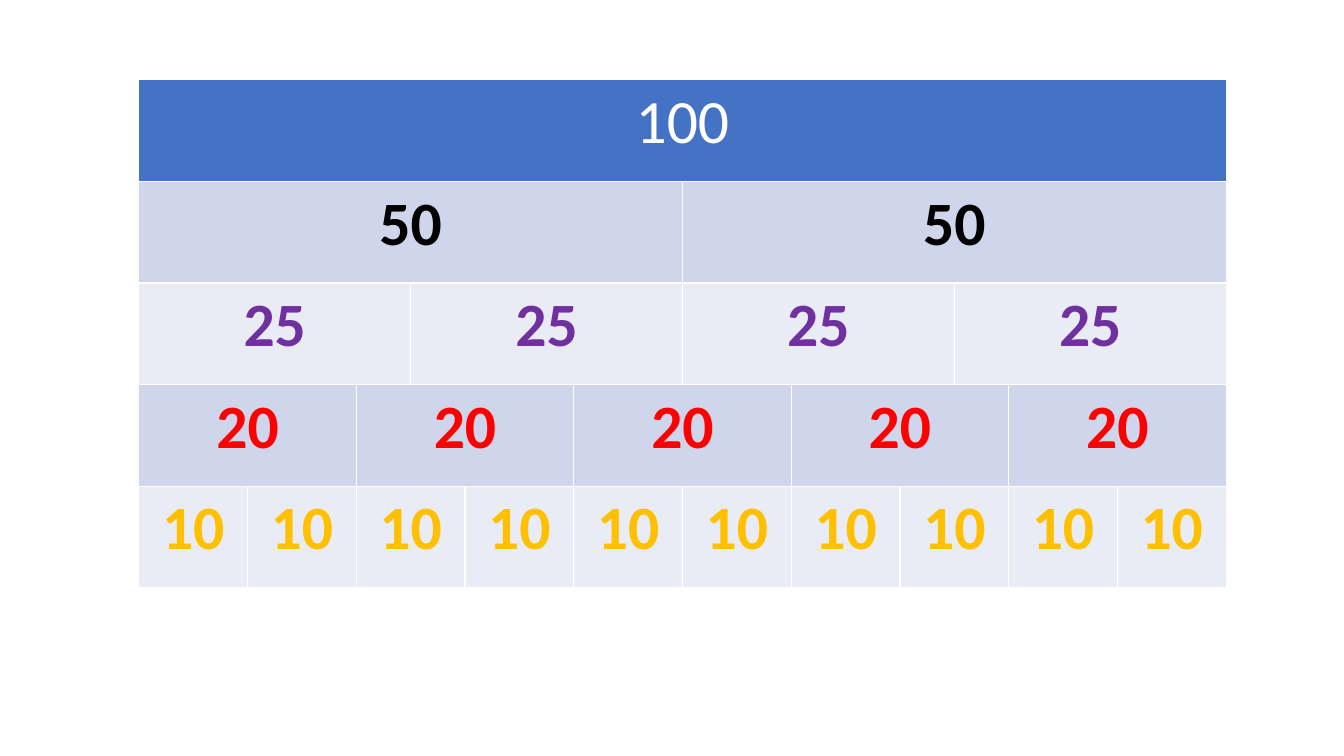
from pptx import Presentation
from pptx.dml.color import RGBColor
from pptx.enum.text import PP_ALIGN
from pptx.util import Cm, Pt

CENTER = PP_ALIGN.CENTER
BLANK_LAYOUT = 6

TOTAL = 100
STEP = 5  # the finest value on which every part boundary falls
STEP_WIDTH = 1.37
ROW_HEIGHT = 2.56
TABLE_LEFT, TABLE_TOP = 3.5, 2.01

# value of each part, text colour, fill colour, bold
ROWS = [
    (100, "FFFFFF", "4472C4", False),
    (50, "000000", "CFD5EA", True),
    (25, "7030A0", "E9EBF5", True),
    (20, "FF0000", "CFD5EA", True),
    (10, "FFC000", "E9EBF5", True),
]


def color(hex_string):
    return RGBColor.from_string(hex_string)


def part_boundaries():
    """Return every value at which a part of any row starts or ends."""
    return sorted({edge for value, *_ in ROWS
                   for edge in range(0, TOTAL + 1, value)})


def add_parts_table(slide, boundaries):
    steps = [(end - start) // STEP
             for start, end in zip(boundaries, boundaries[1:])]
    table = slide.shapes.add_table(
        len(ROWS), len(steps), Cm(TABLE_LEFT), Cm(TABLE_TOP),
        Cm(STEP_WIDTH * sum(steps)), Cm(ROW_HEIGHT * len(ROWS))).table
    for column, count in zip(table.columns, steps):
        column.width = Cm(STEP_WIDTH * count)
    for row in table.rows:
        row.height = Cm(ROW_HEIGHT)
    return table


def write_cell(cell, text, text_color, bold):
    paragraph = cell.text_frame.paragraphs[0]
    paragraph.text = text
    paragraph.alignment = CENTER
    font = paragraph.font
    font.name = "Calibri"
    font.size = Pt(44)
    font.bold = bold
    font.color.rgb = color(text_color)


def fill_row(table, row_index, boundaries):
    """Colour one row and merge its cells into equal parts of the total."""
    value, text_color, fill_color, bold = ROWS[row_index]
    for cell in table.rows[row_index].cells:
        cell.fill.solid()
        cell.fill.fore_color.rgb = color(fill_color)
    for start in range(0, TOTAL, value):
        first = boundaries.index(start)
        last = boundaries.index(start + value) - 1
        cell = table.cell(row_index, first)
        if last > first:
            cell.merge(table.cell(row_index, last))
        write_cell(cell, str(value), text_color, bold)


def main():
    presentation = Presentation()
    presentation.slide_width = Cm(33.87)
    presentation.slide_height = Cm(19.05)
    slide = presentation.slides.add_slide(
        presentation.slide_layouts[BLANK_LAYOUT])
    boundaries = part_boundaries()
    table = add_parts_table(slide, boundaries)
    for row_index in range(len(ROWS)):
        fill_row(table, row_index, boundaries)
    presentation.save("out.pptx")


if __name__ == "__main__":
    main()
